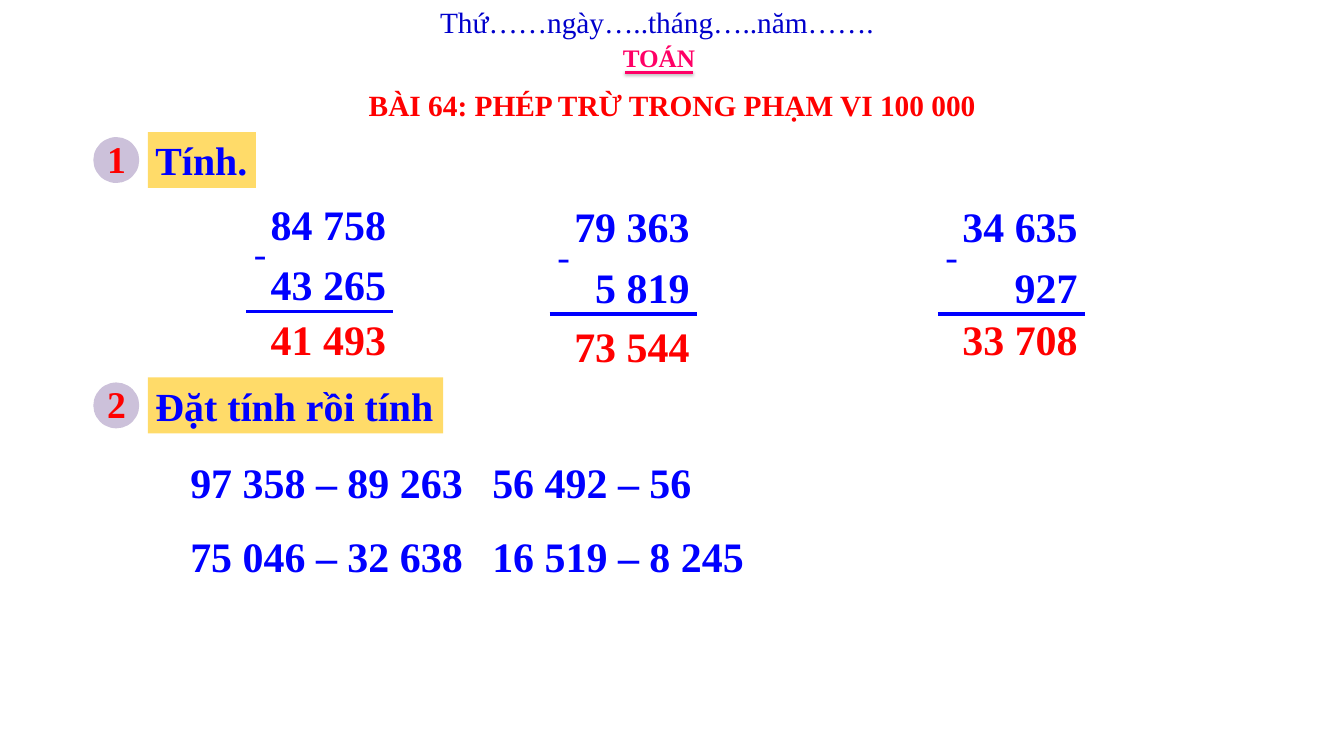
from lxml import etree
from pptx import Presentation, util as u
from pptx.dml.color import RGBColor
from pptx.enum import shapes, text
from pptx.oxml import parse_xml
from pptx.oxml.ns import nsdecls, qn

FONT = "Times New Roman"
NAVY = RGBColor(0x00, 0x00, 0xCC)
BLUE = RGBColor(0x00, 0x00, 0xFF)
RED = RGBColor(0xFF, 0x00, 0x00)
PINK = RGBColor(0xFF, 0x00, 0x66)
LILAC = RGBColor(0xCC, 0xC1, 0xDA)
YELLOW = RGBColor(0xFF, 0xDB, 0x69)
LEFT, CENTER, RIGHT = text.PP_ALIGN.LEFT, text.PP_ALIGN.CENTER, text.PP_ALIGN.RIGHT

SOFT_SHADOW = (
    f'<a:effectLst {nsdecls("a")}><a:outerShdw blurRad="39370" dist="20320" dir="5400000" '
    'rotWithShape="0"><a:srgbClr val="000000"><a:alpha val="38000"/></a:srgbClr>'
    '</a:outerShdw></a:effectLst>')
NO_SHADOW = f'<a:effectLst {nsdecls("a")}/>'


class Worksheet:
    """Holds the slide and the text style of the lesson."""

    def __init__(self, slide):
        self.slide = slide

    def place(self, shape, left, top, width, height):
        shape.left, shape.top = u.Inches(left), u.Inches(top)
        shape.width, shape.height = u.Inches(width), u.Inches(height)

    def add_words(self, para, words, size, color, bold=True, align=LEFT):
        para.alignment = align
        span = para.add_run()
        span.text = words
        span.font.name, span.font.size = FONT, u.Pt(size)
        span.font.bold, span.font.color.rgb = bold, color

    def label(self, words, place, size, color, bold=True, align=LEFT, wrap=True):
        box = self.slide.shapes.add_textbox(*map(u.Inches, place))
        box.text_frame.word_wrap = wrap
        self.add_words(box.text_frame.paragraphs[0], words, size, color, bold, align)

    def block(self, kind, place, fill, border=None):
        shape = self.slide.shapes.add_shape(kind, *map(u.Inches, place))
        shape.shadow.inherit = False
        shape.fill.solid()
        shape.fill.fore_color.rgb = fill
        if border is None:
            shape.line.fill.background()
        else:
            shape.line.color.rgb, shape.line.width = border, u.Pt(2)
        return shape

    def rule(self, left, right, y, color, weight, effect=NO_SHADOW):
        line = self.slide.shapes.add_connector(
            shapes.MSO_CONNECTOR.STRAIGHT, *map(u.Inches, (left, y, right, y)))
        line.line.color.rgb, line.line.width = color, u.Pt(weight)
        line._element.spPr.append(parse_xml(effect))

    def title(self, words, place):
        title = self.slide.shapes.title
        self.place(title, *place)
        title.text_frame.vertical_anchor = text.MSO_ANCHOR.MIDDLE
        self.add_words(title.text_frame.paragraphs[0], words, 28, RED, align=CENTER)

    def heading(self, number, words, top, width):
        """Numbered badge followed by a highlighted exercise heading."""
        self.block(shapes.MSO_SHAPE.OVAL, (1.25, top + 0.08, 0.58, 0.58), LILAC, LILAC)
        self.label(str(number), (1.32, top, 0.45, 0.71), 36, RED, wrap=False)
        bar = self.block(shapes.MSO_SHAPE.RECTANGLE, (1.96, top, width, 0.74), YELLOW)
        bar.text_frame.word_wrap = False
        bar.text_frame.vertical_anchor = text.MSO_ANCHOR.TOP
        self.add_words(bar.text_frame.paragraphs[0], words, 38, BLUE)

    def subtraction(self, left, top, numbers, answer_top):
        """Column subtraction, right-aligned over its rule."""
        width = 1.95
        tops = (top, top + 0.8, answer_top)
        for number, y, color in zip(numbers, tops, (BLUE, BLUE, RED)):
            self.label(number, (left, y, width, 0.77), 40, color, align=RIGHT)
        self.label("-", (left - 0.18, top + 0.42, 0.73, 0.71), 36, BLUE, False, CENTER)
        self.rule(left, left + width, top + 1.55, BLUE, 3)

    def exercises(self, rows, place, stops):
        """Rows of sums in the body placeholder, set on tab stops."""
        body = self.slide.placeholders[1]
        self.place(body, *place)
        frame = body.text_frame
        frame.auto_size = text.MSO_AUTO_SIZE.NONE
        for index, sums in enumerate(rows):
            para = frame.add_paragraph() if index else frame.paragraphs[0]
            props = para._p.get_or_add_pPr()
            props.set("marL", "0")
            props.set("indent", "0")
            etree.SubElement(props, qn("a:buNone"))
            tabs = etree.SubElement(props, qn("a:tabLst"))
            for stop in stops:
                etree.SubElement(tabs, qn("a:tab"), pos=str(u.Inches(stop)), algn="l")
            para.space_before = u.Pt(22 if index else 0)
            self.add_words(para, "".join("\t" + item for item in sums), 40, BLUE)


def main():
    deck = Presentation()
    deck.slide_width, deck.slide_height = u.Inches(17.8), u.Inches(10)
    page = Worksheet(deck.slides.add_slide(deck.slide_layouts[1]))

    page.label("Thứ……ngày…..tháng…..năm…….", (5.73, 0, 6.01, 0.57), 28, NAVY,
               bold=False, wrap=False)
    page.label("TOÁN", (8.15, 0.51, 1.17, 0.5), 24, PINK, wrap=False)
    page.rule(8.28, 9.18, 0.96, PINK, 2, SOFT_SHADOW)
    page.title("BÀI 64: PHÉP TRỪ TRONG PHẠM VI 100 000", (4.19, 1.07, 9.42, 0.63))

    page.heading(1, "Tính.", 1.75, 1.43)
    page.subtraction(3.26, 2.58, ("84 758", "43 265", "41 493"), 4.1)
    page.subtraction(7.28, 2.61, ("79 363", "5 819", "73 544"), 4.2)
    page.subtraction(12.42, 2.61, ("34 635", "927", "33 708"), 4.1)

    page.heading(2, "Đặt tính rồi tính", 5, 3.91)
    page.exercises([("97 358 – 89 263", "56 492 – 56"),
                    ("75 046 – 32 638", "16 519 – 8 245")],
                   (1.92, 6, 15.4, 1.78), (1.58, 9.53))
    deck.save("out.pptx")


if __name__ == "__main__":
    main()
